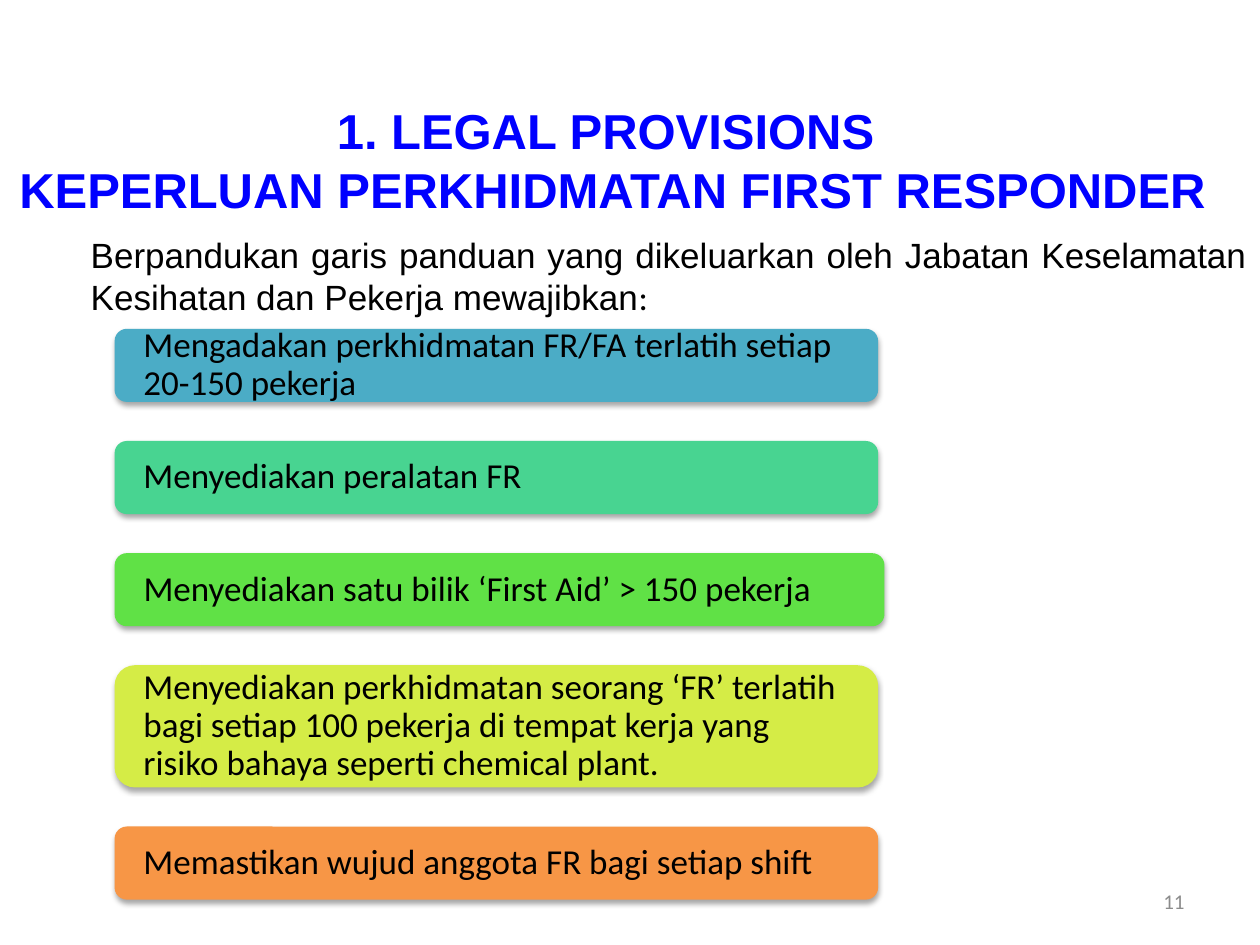
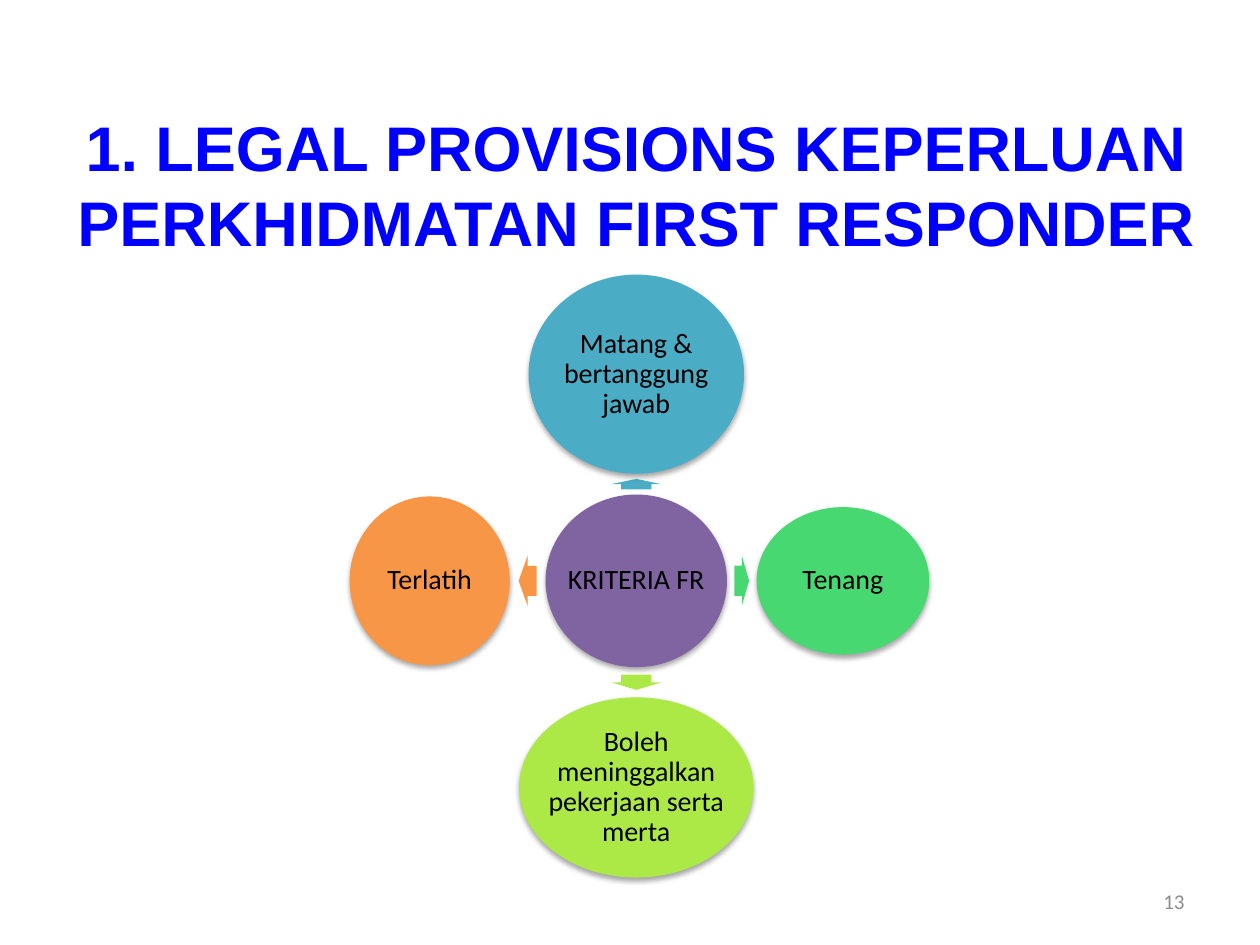
"""Build two slides on the legal provisions for first responders."""
from lxml import etree
from pptx import Presentation
from pptx import util as u
from pptx.dml.color import RGBColor
from pptx.enum import shapes, text
from pptx.oxml.ns import qn

PX = 9144
COLOURS = {
    "title": "0000FF", "ink": "000000", "page": "8C8C8C",
    "teal": "4BACC6", "mint": "48D491", "grass": "60E146", "lemon": "D5EC46",
    "orange": "F79646", "purple": "8064A2", "green": "47D872", "lime": "ACE946",
}
ALIGN = text.PP_ALIGN


class Deck:
    """Hold the shared style and the slide being drawn."""

    def __init__(self):
        self.file = Presentation()
        self.file.slide_width, self.file.slide_height = u.Emu(1000 * PX), u.Emu(750 * PX)
        self.slide = None

    def start(self, layout, page):
        self.slide = self.file.slides.add_slide(self.file.slide_layouts[layout])
        number = self.slide.shapes.add_textbox(*self.px(717, 695, 233, 40))
        self.fill_text(number.text_frame, page, 12, "page", ALIGN.RIGHT)
        number.text_frame.vertical_anchor = text.MSO_ANCHOR.MIDDLE

    def px(self, *lengths):
        return [u.Emu(round(length * PX)) for length in lengths]

    def fill_text(self, frame, words, size, colour="ink", align=ALIGN.LEFT,
                  font="Calibri", bold=False, wrap=True):
        frame.text = words
        frame.word_wrap = wrap
        frame.auto_size = text.MSO_AUTO_SIZE.NONE
        for paragraph in frame.paragraphs:
            paragraph.alignment = align
            for run in paragraph.runs:
                self.style(run, size, colour, font, bold)

    def style(self, run, size, colour, font, bold=False):
        run.font.size, run.font.name, run.font.bold = u.Pt(size), font, bold
        run.font.color.rgb = RGBColor.from_string(COLOURS[colour])

    def place(self, holder, box):
        holder.left, holder.top, holder.width, holder.height = self.px(*box)
        holder.text_frame.vertical_anchor = text.MSO_ANCHOR.TOP
        return holder.text_frame

    def title(self, words, size, box):
        frame = self.place(self.slide.shapes.title, box)
        self.fill_text(frame, words, size, "title", ALIGN.CENTER, "Arial", True, wrap=False)

    def intro(self, words, ending, box):
        frame = self.place(self.slide.placeholders[1], box)
        self.fill_text(frame, words, 20, align=ALIGN.JUSTIFY, font="Arial")
        paragraph = frame.paragraphs[0]
        paragraph.space_before = u.Pt(0)
        paragraph._p.get_or_add_pPr().set("marL", str(62 * PX))
        colon = paragraph.add_run()
        colon.text = ending
        self.style(colon, 20, "ink", "Calibri")

    def block(self, preset, colour, box):
        block = self.slide.shapes.add_shape(preset, *self.px(*box))
        block.shadow.inherit = False
        block.fill.solid()
        block.fill.fore_color.rgb = RGBColor.from_string(COLOURS[colour])
        block.line.fill.background()
        return block

    def shade(self, block):
        effects = block._element.spPr.find(qn("a:effectLst"))
        shadow = etree.SubElement(effects, qn("a:outerShdw"), blurRad="40000",
                                  dist="23000", dir="5400000", rotWithShape="0")
        black = etree.SubElement(shadow, qn("a:srgbClr"), val=COLOURS["ink"])
        etree.SubElement(black, qn("a:alpha"), val="35000")

    def label(self, block, words, size, inset, align, wrap):
        self.shade(block)
        frame = block.text_frame
        self.fill_text(frame, words, size, align=align, wrap=wrap)
        frame.vertical_anchor = text.MSO_ANCHOR.MIDDLE
        frame.margin_left, frame.margin_right = self.px(inset, inset)
        frame.margin_top = frame.margin_bottom = 0
        frame.paragraphs[0].line_spacing = 0.9

    def duty(self, words, colour, box):
        bar = self.block(shapes.MSO_SHAPE.ROUNDED_RECTANGLE, colour, box)
        self.label(bar, words, 20, 23 - 0.05 * box[3], ALIGN.LEFT, True)

    def circle(self, words, colour, centre, size):
        (x, y), (width, height) = centre, size
        disc = self.block(shapes.MSO_SHAPE.OVAL, colour,
                          (x - width / 2, y - height / 2, width, height))
        self.label(disc, words, 16, 2, ALIGN.CENTER, False)

    def arrow(self, colour, centre, length, angle):
        x, y = centre
        pointer = self.block(shapes.MSO_SHAPE.RIGHT_ARROW, colour,
                             (x - length / 2, y - 20, length, 40))
        pointer.adjustments[0], pointer.adjustments[1] = 0.6, 0.5
        pointer.rotation = angle


def requirements(deck):
    deck.start(0, "11")
    deck.title("1. LEGAL PROVISIONS \nKEPERLUAN PERKHIDMATAN FIRST RESPONDER",
               28, (0, 75, 972, 104))
    deck.intro("Berpandukan garis panduan yang dikeluarkan oleh Jabatan Keselamatan "
               "Kesihatan dan Pekerja mewajibkan", ":", (0, 180, 1000, 87))
    duties = [
        ("Mengadakan perkhidmatan FR/FA terlatih setiap 20-150 pekerja", "teal", 606, 58),
        ("Menyediakan peralatan FR", "mint", 606, 58),
        ("Menyediakan satu bilik ‘First Aid’ > 150 pekerja", "grass", 611, 58),
        ("Menyediakan perkhidmatan seorang ‘FR’ terlatih bagi setiap 100 pekerja di "
         "tempat kerja yang risiko bahaya seperti chemical plant.", "lemon", 606, 97),
        ("Memastikan wujud anggota FR bagi setiap shift", "orange", 606, 58),
    ]
    top, gap = 261, 31
    for words, colour, width, height in duties:
        deck.duty(words, colour, (91, top, width, height))
        top += height + gap


def criteria(deck):
    deck.start(5, "13")
    deck.title("1. LEGAL PROVISIONS KEPERLUAN\nPERKHIDMATAN FIRST RESPONDER",
               36, (10, 81, 990, 131))
    hub, hub_size, reach = (505, 461), (144, 137), 164
    deck.circle("KRITERIA FR", "purple", hub, hub_size)
    traits = [
        ("Matang &\vbertanggung\vjawab", "teal", (171, 158), (0, -1), 270),
        ("Tenang", "green", (137, 117), (1, 0), 0),
        ("Boleh\vmeninggalkan\vpekerjaan serta\vmerta", "lime", (186, 143), (0, 1), 90),
        ("Terlatih", "orange", (127, 134), (-1, 0), 180),
    ]
    for words, colour, size, (across, down), angle in traits:
        axis = 0 if across else 1
        inner, outer = hub_size[axis] / 2, reach - size[axis] / 2
        middle = (inner + outer) / 2
        deck.arrow(colour, (hub[0] + across * middle, hub[1] + down * middle),
                   (outer - inner) / 2, angle)
        deck.circle(words, colour, (hub[0] + across * reach, hub[1] + down * reach), size)


def main():
    deck = Deck()
    requirements(deck)
    criteria(deck)
    deck.file.save("out.pptx")


if __name__ == "__main__":
    main()
